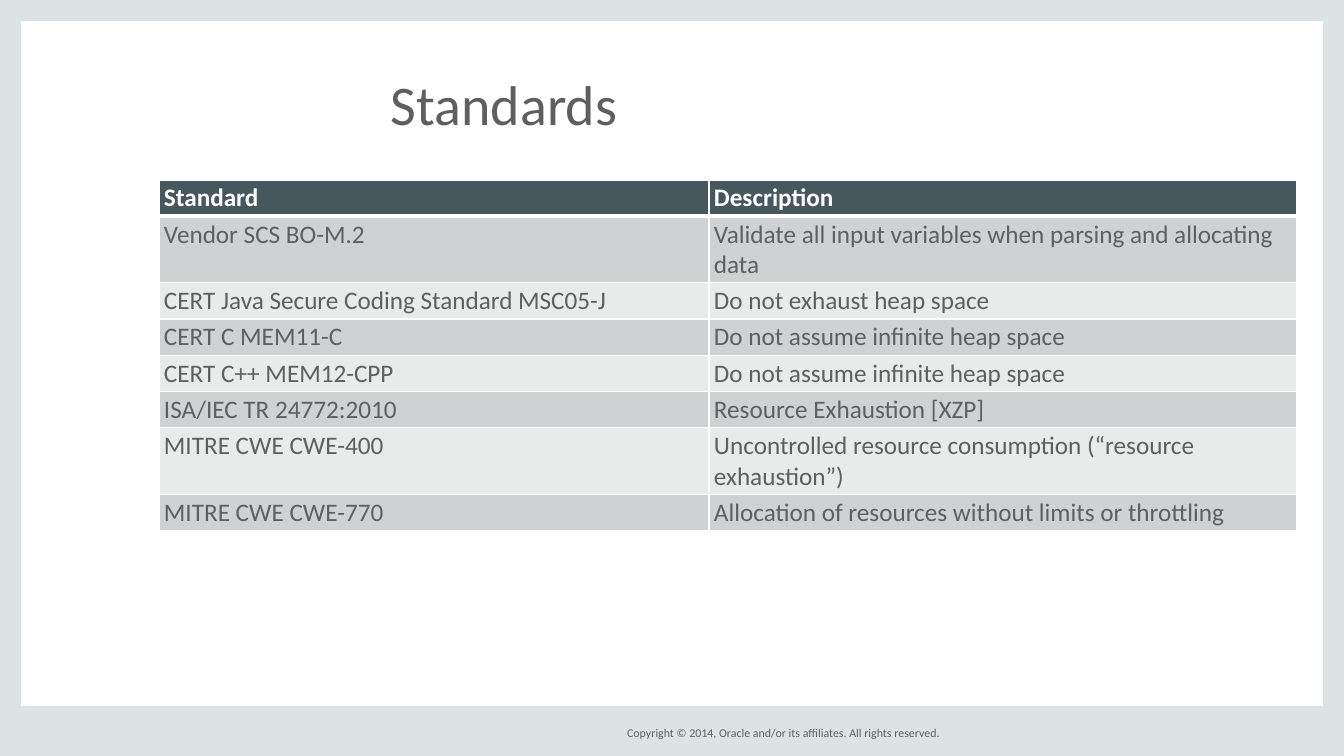
from lxml import etree
from pptx import Presentation
from pptx import util as u
from pptx.dml.color import RGBColor
from pptx.enum import shapes, text
from pptx.oxml import ns

PX = 12192000 / 1344
COLORS = {"frame": "DCE3E4", "ink": "5F5F5F", "white": "FFFFFF",
          "header": "46575E", "odd": "CFD1D2", "even": "E9EAEA"}
STANDARDS = [
    ("Standard", "Description"),
    ("Vendor SCS BO-M.2", "Validate all input variables when parsing and allocating data"),
    ("CERT Java Secure Coding Standard MSC05-J", "Do not exhaust heap space"),
    ("CERT C MEM11-C", "Do not assume infinite heap space"),
    ("CERT C++ MEM12-CPP", "Do not assume infinite heap space"),
    ("ISA/IEC TR 24772:2010", "Resource Exhaustion [XZP]"),
    ("MITRE CWE CWE-400", "Uncontrolled resource consumption (“resource exhaustion”)"),
    ("MITRE CWE CWE-770", "Allocation of resources without limits or throttling"),
]
COLUMN_WIDTHS = (550, 588)
ROW_HEIGHTS = (35, 66, 35, 35, 35, 35, 66, 35)


def px(n):
    return u.Emu(round(n * PX))


def rgb(name):
    return RGBColor.from_string(COLORS[name])


def set_attrs(obj, values):
    for name, value in values.items():
        setattr(obj, name, value)


def set_margins(obj, side, top):
    set_attrs(obj, {"margin_left": px(side), "margin_right": px(side),
                    "margin_top": px(top), "margin_bottom": px(top)})


def write(tf, content, size, color="ink", bold=False, align=text.PP_ALIGN.LEFT):
    p = tf.paragraphs[0]
    p.alignment = align
    r = p.add_run()
    r.text = content
    set_attrs(r.font, {"name": "Calibri", "size": u.Pt(size), "bold": bold})
    r.font.color.rgb = rgb(color)


def add_bar(s, *box):
    sp = s.shapes.add_shape(shapes.MSO_SHAPE.RECTANGLE, *map(px, box))
    sp.shadow.inherit = False
    sp.fill.solid()
    sp.fill.fore_color.rgb = rgb("frame")
    sp.line.fill.background()


def add_label(s, box, content, size, margins=(0, 0), wrap=True,
              anchor=text.MSO_ANCHOR.TOP, align=text.PP_ALIGN.LEFT):
    tf = s.shapes.add_textbox(*map(px, box)).text_frame
    set_attrs(tf, {"word_wrap": wrap, "vertical_anchor": anchor})
    set_margins(tf, *margins)
    write(tf, content, size, align=align)


def set_borders(cell, top, bottom):
    tc_pr = cell._tc.get_or_add_tcPr()
    for side, points in (("L", 1), ("R", 1), ("T", top), ("B", bottom)):
        ln = etree.SubElement(tc_pr, ns.qn(f"a:ln{side}"), w=str(u.Pt(points)))
        fill = etree.SubElement(ln, ns.qn("a:solidFill"))
        etree.SubElement(fill, ns.qn("a:srgbClr"), val=COLORS["white"])


def add_standards_table(s, left, top):
    frame = s.shapes.add_table(len(STANDARDS), len(COLUMN_WIDTHS), px(left), px(top),
                               px(sum(COLUMN_WIDTHS)), px(sum(ROW_HEIGHTS)))
    table = frame.table
    for column, width in zip(table.columns, COLUMN_WIDTHS):
        column.width = px(width)
    for i, (row, height, entries) in enumerate(zip(table.rows, ROW_HEIGHTS, STANDARDS)):
        row.height = px(height)
        header = i == 0
        fill = "header" if header else "odd" if i % 2 else "even"
        for cell, content in zip(row.cells, entries):
            set_margins(cell, 5, 3)
            set_borders(cell, 3 if i == 1 else 1, 3 if header else 1)
            cell.fill.solid()
            cell.fill.fore_color.rgb = rgb(fill)
            write(cell.text_frame, content, 18, "white" if header else "ink", header)


def main():
    prs = Presentation()
    set_attrs(prs, {"slide_width": px(1344), "slide_height": px(756)})
    s = prs.slides.add_slide(prs.slide_layouts[6])
    for box in ((0, 0, 21, 756), (1323, 0, 21, 756), (0, 706, 1344, 50), (0, 0, 1344, 21)):
        add_bar(s, *box)
    add_label(s, (627, 723, 313, 20),
              "Copyright © 2014, Oracle and/or its affiliates. All rights reserved.", 8.5,
              wrap=False, anchor=text.MSO_ANCHOR.MIDDLE, align=text.PP_ALIGN.RIGHT)
    add_label(s, (386, 68, 466, 73), "Standards", 40, margins=(5, 2))
    add_standards_table(s, 159, 180)
    prs.save("out.pptx")


if __name__ == "__main__":
    main()
